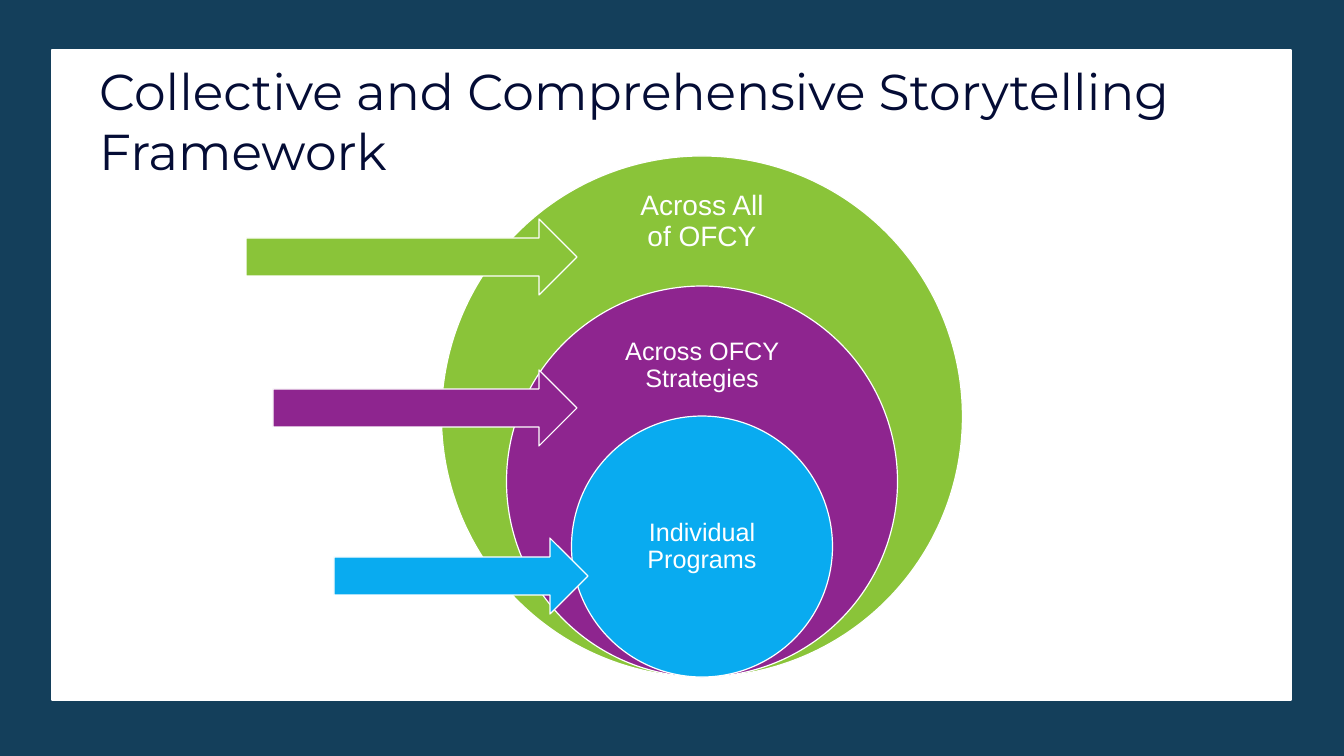
import pptx
import pptx.util
import pptx.dml.color
import pptx.enum.shapes
import pptx.enum.text

RGBColor = pptx.dml.color.RGBColor
SHAPES = pptx.enum.shapes.MSO_SHAPE
ANCHOR = pptx.enum.text.MSO_ANCHOR
ALIGN = pptx.enum.text.PP_ALIGN

NAVY = RGBColor(0x14, 0x3F, 0x5B)
INK = RGBColor(0x04, 0x0C, 0x35)
WHITE = RGBColor(0xFF, 0xFF, 0xFF)
GREEN = RGBColor(0x8A, 0xC4, 0x39)
PURPLE = RGBColor(0x8E, 0x25, 0x8F)
BLUE = RGBColor(0x09, 0xAB, 0xF0)

EMU_PER_PX = 914400 / 100.8
SLIDE_WIDTH, SLIDE_HEIGHT = 1344, 756
CIRCLE_CENTER, CIRCLE_BOTTOM = 702, 677
LARGEST_DIAMETER, DIAMETER_STEP = 521, 130
LABEL_WIDTH, LABEL_HEIGHT = 183, 90
ARROW_HEIGHT = 76

LEVELS = [
    ("Across All of OFCY", GREEN, 20, 16, 222),
    ("Across OFCY Strategies", PURPLE, 18, 14, 366),
    ("Individual Programs", BLUE, 18, 14, 547),
]
ARROWS = [
    (246, 577, 219, GREEN),
    (273, 577, 370, PURPLE),
    (334, 588, 538, BLUE),
]


def px(length):
    return pptx.util.Emu(round(length * EMU_PER_PX))


def apply_format(target, values):
    for name, value in values.items():
        setattr(target, name, value)


def add_block(slide, kind, box, color, line_color=None):
    shape = slide.shapes.add_shape(kind, *map(px, box))
    shape.shadow.inherit = False
    shape.fill.solid()
    shape.fill.fore_color.rgb = color
    if line_color is None:
        shape.line.fill.background()
    else:
        shape.line.color.rgb = line_color
        shape.line.width = pptx.util.Pt(0.85)
    return shape


def write_text(shape, text, frame_format, paragraph_format, font_format, color):
    apply_format(shape.text_frame, frame_format)
    paragraph = shape.text_frame.paragraphs[0]
    apply_format(paragraph, paragraph_format)
    run = paragraph.add_run()
    run.text = text
    apply_format(run.font, font_format)
    run.font.color.rgb = color


def place_title(slide, text):
    title = slide.shapes.title
    apply_format(title, {"left": px(89), "top": px(55),
                         "width": px(1190), "height": px(202)})
    write_text(
        title, text,
        {"word_wrap": True, "vertical_anchor": ANCHOR.TOP,
         "auto_size": pptx.enum.text.MSO_AUTO_SIZE.NONE},
        {"alignment": ALIGN.LEFT, "space_after": pptx.util.Pt(6)},
        {"name": "Montserrat", "size": pptx.util.Pt(36)},
        INK)
    tree = slide.shapes._spTree
    tree.remove(title._element)
    tree.append(title._element)


def add_circle(slide, level, color):
    diameter = LARGEST_DIAMETER - level * DIAMETER_STEP
    box = (CIRCLE_CENTER - diameter / 2, CIRCLE_BOTTOM - diameter,
           diameter, diameter)
    add_block(slide, SHAPES.OVAL, box, color, WHITE)


def add_label(slide, text, size, inset, middle):
    box = (CIRCLE_CENTER - LABEL_WIDTH / 2, middle - LABEL_HEIGHT / 2,
           LABEL_WIDTH, LABEL_HEIGHT)
    label = slide.shapes.add_textbox(*map(px, box))
    write_text(
        label, text,
        {"word_wrap": True, "vertical_anchor": ANCHOR.MIDDLE,
         "margin_left": px(inset), "margin_right": px(inset),
         "margin_top": 0, "margin_bottom": 0},
        {"alignment": ALIGN.CENTER, "line_spacing": 0.9},
        {"name": "Arial", "size": pptx.util.Pt(size)},
        WHITE)


def main():
    presentation = pptx.Presentation()
    apply_format(presentation, {"slide_width": px(SLIDE_WIDTH),
                                "slide_height": px(SLIDE_HEIGHT)})
    slide = presentation.slides.add_slide(presentation.slide_layouts[5])

    add_block(slide, SHAPES.RECTANGLE, (0, 0, SLIDE_WIDTH, SLIDE_HEIGHT), NAVY)
    add_block(slide, SHAPES.RECTANGLE, (52, 50, 1239, 650), WHITE, WHITE)
    place_title(slide, "Collective and Comprehensive Storytelling Framework")

    for level, (text, color, size, inset, middle) in enumerate(LEVELS):
        add_circle(slide, level, color)
        add_label(slide, text, size, inset, middle)

    for left, tip, top, color in ARROWS:
        box = (left, top, tip - left, ARROW_HEIGHT)
        add_block(slide, SHAPES.RIGHT_ARROW, box, color, WHITE)

    presentation.save("out.pptx")


if __name__ == "__main__":
    main()
